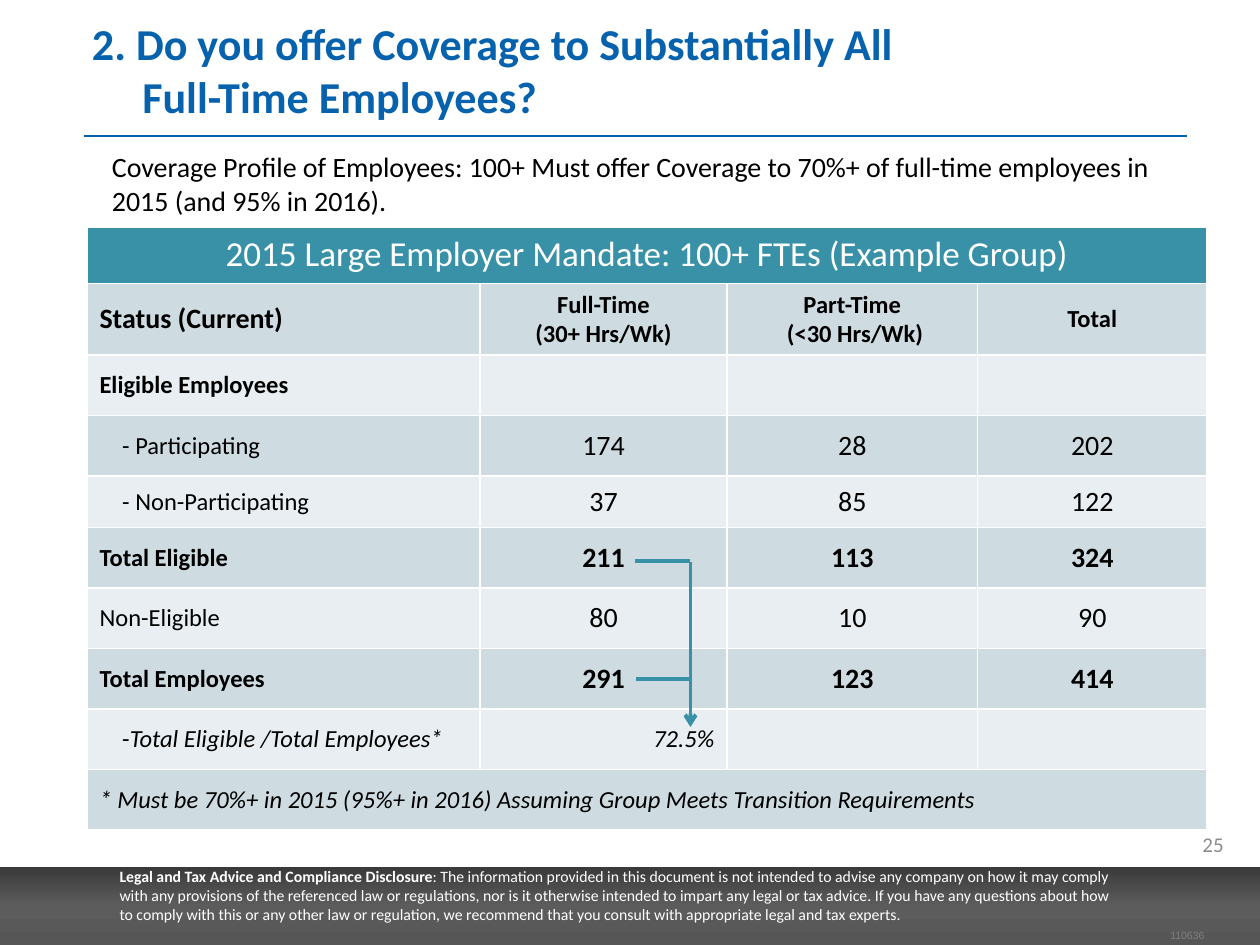
from copy import deepcopy
from dataclasses import dataclass

from lxml import etree
from pptx import Presentation
from pptx import util as u
from pptx.dml.color import RGBColor
from pptx.enum import shapes, text
from pptx.oxml import ns

BLUE, TEAL, WHITE, BLACK = "0762AD", "3891A7", "FFFFFF", "000000"
BANDS = ("E8EEF1", "CEDCE1")
LEFT, CENTER, RIGHT = text.PP_ALIGN.LEFT, text.PP_ALIGN.CENTER, text.PP_ALIGN.RIGHT
MIDDLE = text.MSO_ANCHOR.MIDDLE


@dataclass
class StatusRow:
    label: str
    counts: tuple = ()
    height: float = 0.48
    bold: bool = False
    indented: bool = False


@dataclass
class Segment:
    start: tuple
    end: tuple
    color: str = TEAL
    weight: float = 2.25
    arrow: bool = False


def rgb(color: str) -> RGBColor:
    return RGBColor.from_string(color)


def write(frame, content: str, size: float = 14, color: str = BLACK, bold: bool = False,
          italic: bool = False, align=LEFT, font: str = "Calibri") -> None:
    for index, line in enumerate(content.split("\n")):
        paragraph = frame.add_paragraph() if index else frame.paragraphs[-1]
        paragraph.alignment = align
        for part_index, part in enumerate(line.split("\v")):
            if part_index:
                paragraph.add_line_break()
            run = paragraph.add_run()
            run.text = part
            run.font.name = font
            run.font.size = u.Pt(size)
            run.font.bold = bold
            run.font.italic = italic
            run.font.color.rgb = rgb(color)


def add_frame(slide, left: float, top: float, width: float, height: float):
    frame = slide.shapes.add_textbox(*map(u.Inches, (left, top, width, height))).text_frame
    frame.word_wrap = True
    return frame


def draw_segment(parent, segment: Segment) -> None:
    line = parent.add_connector(shapes.MSO_CONNECTOR.STRAIGHT,
                                *map(u.Inches, segment.start + segment.end))
    line.line.color.rgb = rgb(segment.color)
    line.line.width = u.Pt(segment.weight)
    properties = line._element.spPr
    if segment.arrow:
        etree.SubElement(properties.find(ns.qn("a:ln")), ns.qn("a:tailEnd"), type="arrow")
    etree.SubElement(properties, ns.qn("a:effectLst"))


def fill_cell(cell, color: str, content: str = "", **style) -> None:
    cell.fill.solid()
    cell.fill.fore_color.rgb = rgb(color)
    cell.vertical_anchor = MIDDLE
    if content:
        write(cell.text_frame, content, **style)


def draw_footer(slide) -> None:
    bar = slide.shapes.add_shape(shapes.MSO_SHAPE.RECTANGLE, 0, u.Inches(6.88),
                                 u.Inches(10), u.Inches(0.62))
    bar.shadow.inherit = False
    bar.line.fill.background()
    bar.fill.gradient()
    bar.fill.gradient_angle = 270
    stop_list = bar._element.spPr.find(".//" + ns.qn("a:gsLst"))
    stop_list.append(deepcopy(stop_list[-1]))
    for stop, position, color in zip(bar.fill.gradient_stops, (0, 0.5, 1),
                                     ("3A3A3A", "5C5C5C", "565656")):
        stop.position = position
        stop.color.rgb = rgb(color)

    document_code = add_frame(slide, 9.28, 7.37, 0.28, 0.1)
    document_code.word_wrap = False
    document_code.margin_left = document_code.margin_right = 0
    document_code.margin_top = document_code.margin_bottom = 0
    write(document_code, "110636", size=6, color="808080", align=RIGHT, font="Arial")

    disclosure = add_frame(slide, 0.85, 6.83, 8.12, 0.56)
    write(disclosure, "Legal and Tax Advice and Compliance Disclosure",
          size=9, color=WHITE, bold=True)
    write(disclosure, ": The information provided in this document is not intended to advise "
          "any company on how it may comply with any provisions of the referenced law or "
          "regulations, nor is it otherwise intended to impart any legal or tax advice. If you "
          "have any questions about how to comply with this or any other law or regulation, we "
          "recommend that you consult with appropriate legal and tax experts.",
          size=9, color=WHITE)


def draw_title(slide) -> None:
    title = slide.shapes.title
    title.left, title.top, title.width, title.height = map(u.Inches, (0.63, 0, 9, 1.02))
    frame = title.text_frame
    frame.auto_size = text.MSO_AUTO_SIZE.NONE
    frame.vertical_anchor = text.MSO_ANCHOR.BOTTOM
    write(frame, "2. Do you offer Coverage to Substantially All\vFull-Time Employees?",
          size=25.2, color=BLUE, bold=True)
    hanging = frame.paragraphs[0]._p.get_or_add_pPr()
    hanging.set("marL", str(u.Inches(0.4)))
    hanging.set("indent", str(-u.Inches(0.4)))


def draw_coverage_table(slide) -> None:
    rows = (
        StatusRow("Eligible Employees", bold=True),
        StatusRow("- Participating", (174, 28, 202), indented=True),
        StatusRow("- Non-Participating", (37, 85, 122), height=0.41, indented=True),
        StatusRow("Total Eligible", (211, 113, 324), bold=True),
        StatusRow("Non-Eligible", (80, 10, 90)),
        StatusRow("Total Employees", (291, 123, 414), bold=True),
        StatusRow("-", indented=True),
    )
    column_widths = (3.12, 1.96, 1.99, 1.82)
    row_heights = (0.45, 0.45, *(row.height for row in rows), 0.48)
    table = slide.shapes.add_table(len(row_heights), len(column_widths), u.Inches(0.69),
                                   u.Inches(1.8), u.Inches(8.88), u.Inches(4.78)).table
    for column, width in zip(table.columns, column_widths):
        column.width = u.Inches(width)
    for index, (row, height) in enumerate(zip(table.rows, row_heights)):
        row.height = u.Inches(height)
        for cell in row.cells:
            fill_cell(cell, BANDS[index % 2] if index else TEAL)

    last = len(row_heights) - 1
    for index in (0, last):
        table.cell(index, 0).merge(table.cell(index, len(column_widths) - 1))
    heading = table.cell(0, 0)
    heading.vertical_anchor = text.MSO_ANCHOR.TOP
    write(heading.text_frame, "2015 Large Employer Mandate: 100+ FTEs (Example Group)",
          size=20, color=WHITE, align=CENTER)

    write(table.cell(1, 0).text_frame, "Status (Current)", size=16, bold=True)
    groups = ("Full-Time\n(30+ Hrs/Wk)", "Part-Time\n (<30 Hrs/Wk)", "Total")
    for column, group in enumerate(groups, 1):
        write(table.cell(1, column).text_frame, group, bold=True, align=CENTER)

    for index, row in enumerate(rows, 2):
        label = table.cell(index, 0)
        write(label.text_frame, row.label, bold=row.bold)
        if row.indented:
            label.margin_left = u.Inches(0.28)
        for column, count in enumerate(row.counts, 1):
            write(table.cell(index, column).text_frame, str(count), size=16,
                  bold=row.bold, align=CENTER)

    ratio = last - 1
    write(table.cell(ratio, 0).text_frame, "Total Eligible /Total Employees*", italic=True)
    write(table.cell(ratio, 1).text_frame, "72.5%", italic=True, align=RIGHT)
    write(table.cell(last, 0).text_frame, "* Must be 70%+ in 2015 (95%+ in 2016) Assuming Group "
          "Meets Transition Requirements", italic=True)


def draw_ratio_bracket(slide) -> None:
    bracket = slide.shapes.add_group_shape().shapes
    for segment in (
        Segment((5.48, 4.46), (5.48, 5.77), arrow=True),
        Segment((5.48, 4.45), (5.04, 4.45)),
        Segment((5.48, 5.39), (5.05, 5.39)),
    ):
        draw_segment(bracket, segment)


def main() -> None:
    deck = Presentation()
    deck.slide_width, deck.slide_height = u.Inches(10), u.Inches(7.5)
    slide = deck.slides.add_slide(deck.slide_layouts[5])
    draw_footer(slide)
    draw_segment(slide.shapes, Segment((0.67, 1.08), (9.42, 1.08), BLUE, 0.75))
    draw_title(slide)

    page_number = add_frame(slide, 8.59, 6.5, 1.22, 0.4)
    page_number.vertical_anchor = MIDDLE
    write(page_number, "25", size=12, color="8C8C8C", align=RIGHT)

    draw_coverage_table(slide)
    write(add_frame(slide, 0.79, 1.14, 8.71, 0.64),
          "Coverage Profile of Employees: 100+ Must offer Coverage to 70%+ of full-time "
          "employees in 2015 (and 95% in 2016).", size=16)
    draw_ratio_bracket(slide)
    deck.save("out.pptx")


if __name__ == "__main__":
    main()
